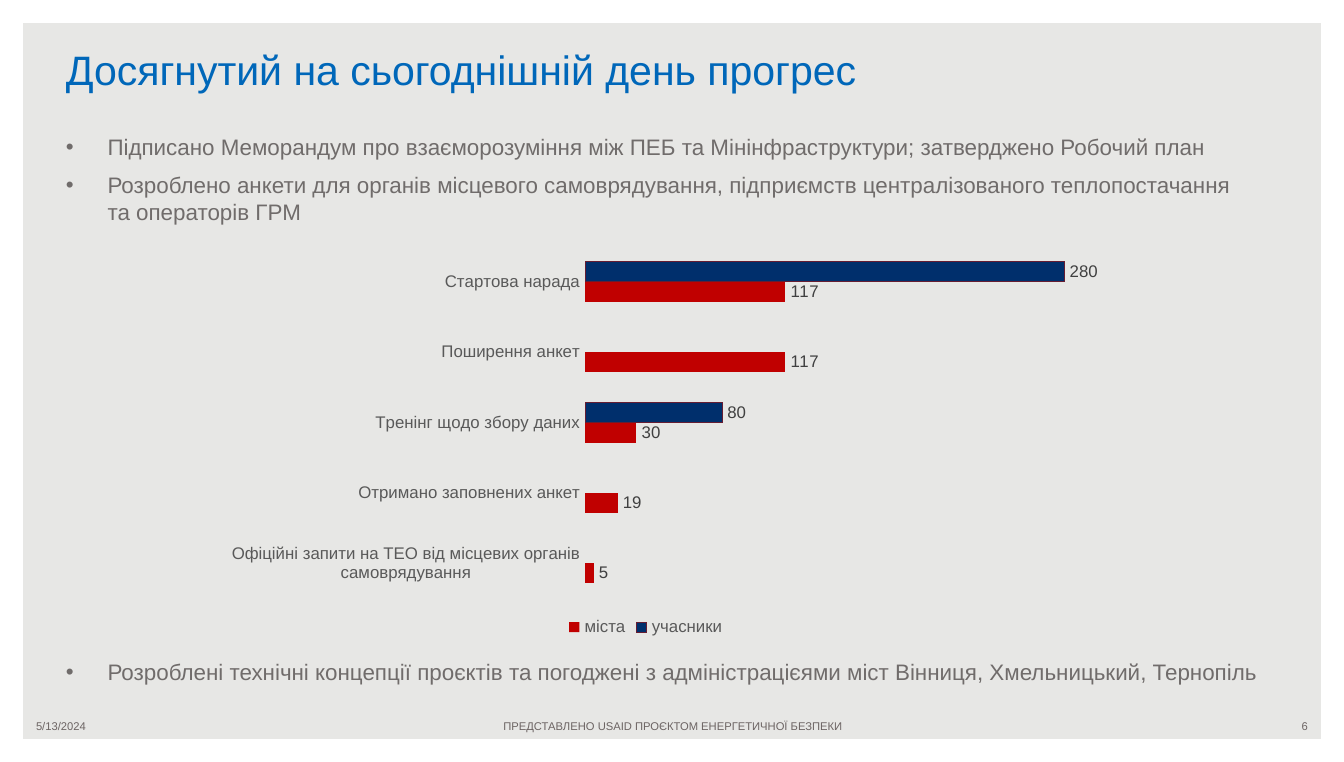
from lxml.etree import SubElement
from pptx import Presentation
from pptx.chart.data import CategoryChartData
from pptx.dml.color import RGBColor
from pptx.enum.chart import XL_CHART_TYPE, XL_LABEL_POSITION, XL_LEGEND_POSITION, XL_TICK_LABEL_POSITION, XL_TICK_MARK
from pptx.enum.shapes import MSO_SHAPE
from pptx.enum.text import MSO_ANCHOR, MSO_AUTO_SIZE, PP_ALIGN
from pptx.oxml import parse_xml
from pptx.oxml.ns import nsdecls, qn
from pptx.util import Inches, Pt

WIDE, HIGH = Inches(10), Inches(5.67)
FONT = "Arial"
PAPER = RGBColor(0xE7, 0xE7, 0xE5)
WHITE = RGBColor(0xFF, 0xFF, 0xFF)
BLUE = RGBColor(0x00, 0x67, 0xB9)
GREY = RGBColor(0x70, 0x6C, 0x6B)
FOOT = RGBColor(0x6C, 0x64, 0x63)
AXIS = RGBColor(0x59, 0x59, 0x59)
LABEL = RGBColor(0x40, 0x40, 0x40)
NAVY = RGBColor(0x00, 0x2F, 0x6C)
WINE = RGBColor(0x65, 0x1D, 0x32)
RED = RGBColor(0xC0, 0x00, 0x00)

TITLE = "Досягнутий на сьогоднішній день прогрес"
# Each point: its lines and the space before it, the last one below the chart
POINTS = [
    (["Підписано Меморандум про взаєморозуміння між ПЕБ та Мінінфраструктури; затверджено Робочий план"], 0),
    (["Розроблено анкети для органів місцевого самоврядування, підприємств централізованого теплопостачання ",
      "та операторів ГРМ"], 0),
    (["Розроблені технічні концепції проєктів та погоджені з адміністрацієями міст Вінниця, Хмельницький, Тернопіль"], 226),
]
STEPS = ["Стартова нарада", "Поширення анкет", "Тренінг щодо збору даних", "Отримано заповнених анкет",
         "Офіційні запити на ТЕО від місцевих органів самоврядування"]
SERIES = [("учасники", [280, None, 80, None, None], NAVY),
          ("міста", [117, 117, 30, 19, 5], RED)]
FEET = [("5/13/2024", 1.7, 23.3, PP_ALIGN.LEFT),
        ("ПРЕДСТАВЛЕНО USAID ПРОЄКТОМ ЕНЕРГЕТИЧНОЇ БЕЗПЕКИ", 34.2, 31.7, PP_ALIGN.CENTER),
        ("6", 75, 23.3, PP_ALIGN.RIGHT)]


def area(left, top, width, height):
    """Turn percent shares of the slide into lengths."""
    return [int(side * part / 100) for side, part in zip((WIDE, HIGH) * 2, (left, top, width, height))]


def move(shape, *shares):
    shape.left, shape.top, shape.width, shape.height = area(*shares)


def style(font, size, color):
    font.name, font.size = FONT, Pt(size)
    font.color.rgb = color


def add_run(para, text, size, color):
    run = para.add_run()
    run.text = text
    style(run.font, size, color)


def add_frame(slide):
    frame = slide.shapes.add_shape(MSO_SHAPE.FRAME, *area(0, 0, 100, 100))
    frame.adjustments[0] = 0.03
    frame.shadow.inherit = False
    frame.fill.solid()
    frame.fill.fore_color.rgb = WHITE
    frame.line.fill.background()
    slide.shapes._spTree.insert(2, frame._element)


def add_title(slide):
    title = slide.shapes.title
    move(title, 3.9, 4.94, 85, 8.29)
    frame = title.text_frame
    frame.auto_size = MSO_AUTO_SIZE.NONE
    frame.vertical_anchor = MSO_ANCHOR.BOTTOM
    para = frame.paragraphs[0]
    para.alignment = PP_ALIGN.LEFT
    add_run(para, TITLE, 22, BLUE)


def add_points(slide):
    body = slide.placeholders[1]
    move(body, 3.9, 16.58, 93.4, 74.43)
    frame = body.text_frame
    frame.auto_size = MSO_AUTO_SIZE.NONE
    for i, (lines, gap) in enumerate(POINTS):
        para = frame.add_paragraph() if i else frame.paragraphs[0]
        props = para._p.get_or_add_pPr()
        props.set("marL", str(Inches(0.31)))
        props.set("indent", str(-Inches(0.31)))
        SubElement(props, qn("a:buFont")).set("typeface", FONT)
        SubElement(props, qn("a:buChar")).set("char", "•")
        para.space_before, para.space_after = Pt(gap), Pt(6)
        for j, line in enumerate(lines):
            if j:
                para.add_line_break()
            add_run(para, line, 12, GREY)


def add_foot(slide, text, left, width, align):
    frame = slide.shapes.add_textbox(*area(left, 93.47, width, 3.53)).text_frame
    frame.word_wrap = True
    frame.vertical_anchor = MSO_ANCHOR.MIDDLE
    para = frame.paragraphs[0]
    para.alignment = align
    add_run(para, text, 6, FOOT)


def set_plot(chart, **shares):
    """Fix the inner plot area as shares of the chart."""
    parts = "".join(f'<c:{key} val="{val}"/>' for key, val in shares.items())
    area_el = chart._chartSpace.chart.plotArea
    for old in area_el.findall(qn("c:layout")):
        area_el.remove(old)
    area_el.insert(0, parse_xml(
        f'<c:layout {nsdecls("c")}><c:manualLayout><c:layoutTarget val="inner"/>'
        f'<c:xMode val="edge"/><c:yMode val="edge"/>{parts}</c:manualLayout></c:layout>'))


def add_bars(slide):
    data = CategoryChartData()
    data.categories = STEPS
    for name, vals, _ in SERIES:
        data.add_series(name, vals)
    chart = slide.shapes.add_chart(XL_CHART_TYPE.BAR_CLUSTERED, *area(13.3, 29.63, 69.5, 54.67), data).chart
    style(chart.font, 9, AXIS)
    chart.has_title = False
    set_plot(chart, x=0.435, y=0.05, w=0.55, h=0.845)

    # Axes without lines, ticks or grid
    for axis in (chart.category_axis, chart.value_axis):
        axis.major_tick_mark = axis.minor_tick_mark = XL_TICK_MARK.NONE
        axis.has_major_gridlines = False
        axis.format.line.fill.background()
        style(axis.tick_labels.font, 9, AXIS)
    chart.category_axis.reverse_order = True
    scale = chart.value_axis
    scale.minimum_scale, scale.maximum_scale = 0, 300
    scale.tick_label_position = XL_TICK_LABEL_POSITION.NONE

    # Bars and their values
    plot = chart.plots[0]
    plot.gap_width, plot.overlap = 150, 0
    plot.vary_by_categories = False
    for bars, (_, _, color) in zip(plot.series, SERIES):
        bars.format.fill.solid()
        bars.format.fill.fore_color.rgb = color
        bars.invert_if_negative = False
        labels = bars.data_labels
        labels.show_value = True
        labels.position = XL_LABEL_POSITION.OUTSIDE_END
        style(labels.font, 9, LABEL)
    edge = plot.series[0].format.line
    edge.color.rgb = WINE
    edge.width = Pt(0)

    # Legend
    chart.has_legend = True
    chart.legend.position = XL_LEGEND_POSITION.BOTTOM
    chart.legend.include_in_layout = False
    style(chart.legend.font, 9, AXIS)


def main():
    deck = Presentation()
    deck.slide_width, deck.slide_height = WIDE, HIGH
    slide = deck.slides.add_slide(deck.slide_layouts[1])
    slide.background.fill.solid()
    slide.background.fill.fore_color.rgb = PAPER
    add_frame(slide)
    add_title(slide)
    add_points(slide)
    for foot in FEET:
        add_foot(slide, *foot)
    add_bars(slide)
    deck.save("out.pptx")


if __name__ == "__main__":
    main()
